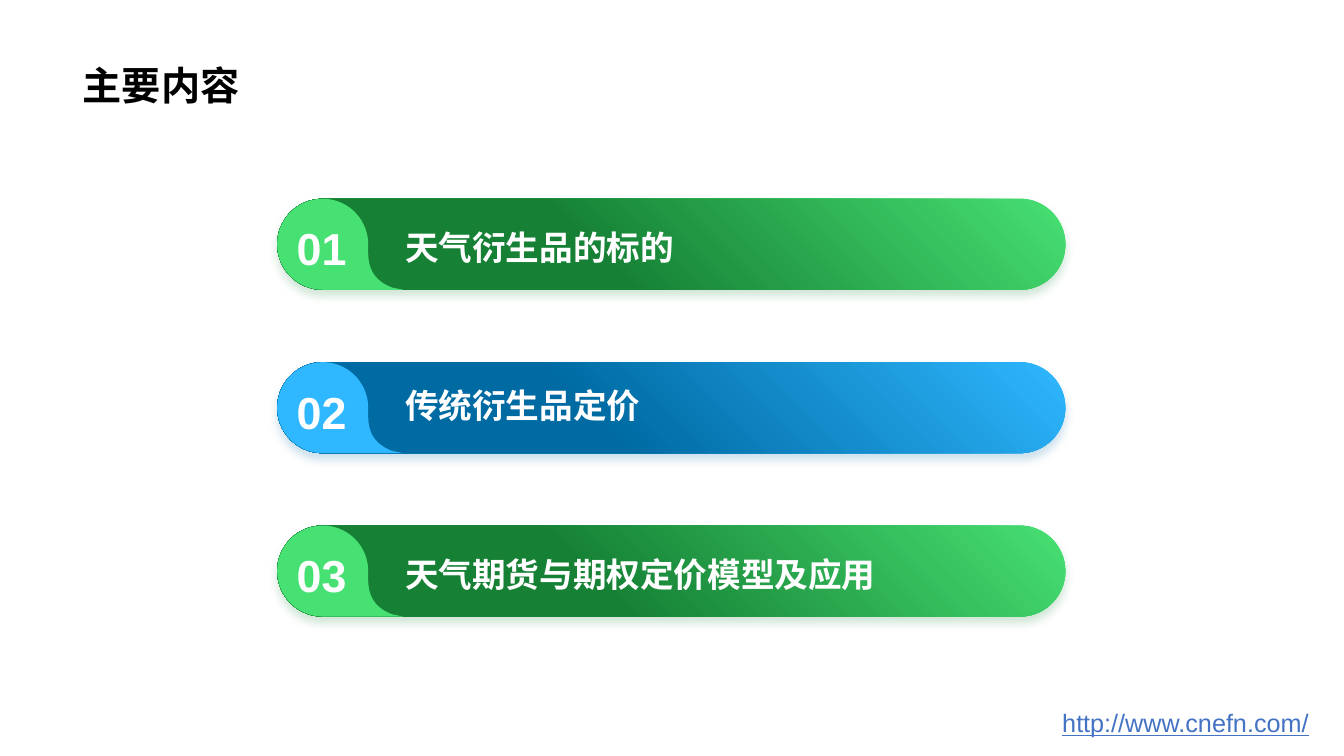
from math import cos, pi, sin

from lxml.etree import SubElement
from pptx import Presentation
from pptx.dml.color import RGBColor
from pptx.enum.shapes import MSO_SHAPE as Shape
from pptx.enum.text import MSO_ANCHOR as Anchor, MSO_AUTO_SIZE as AutoSize, PP_ALIGN as Align
from pptx.oxml.ns import qn
from pptx.util import Pt

TITLE = "主要内容"
SITE = "http://www.cnefn.com/"
# heading, bright colour, dark colour, distance of the heading below the bar top
CHAPTERS = [
    ("天气衍生品的标的", "green", "dark green", 16.4),
    ("传统衍生品定价", "blue", "dark blue", 13),
    ("天气期货与期权定价模型及应用", "green", "dark green", 16.4),
]
COLORS = {
    "black": "000000", "white": "FFFFFF", "link": "4472C4",
    "green": "47E073", "dark green": "168135",
    "blue": "2FB7FF", "dark blue": "006BA3",
}
BAR_LEFT, BAR_TOP, BAR_WIDTH, BAR_HEIGHT = 198, 142, 563, 65
BAR_PITCH = 116.7
RADIUS = BAR_HEIGHT / 2
TAIL_CURVE = [(65, 36.5), (65, 45), (65.5, 57), (82, 63.4)]
TAIL_TIP = (90, 65)


def color(name):
    return RGBColor.from_string(COLORS[name])


def write(shape, text, align=Align.LEFT, anchor=Anchor.TOP, wrap=True, **formats):
    frame = shape.text_frame
    frame.auto_size = AutoSize.NONE
    frame.word_wrap = wrap
    frame.vertical_anchor = anchor
    para = frame.paragraphs[0]
    para.alignment = align
    span = para.add_run()
    span.text = text
    span.font.name = "Arial"
    span.font.color.rgb = color(formats.pop("ink"))
    for name, value in formats.items():
        setattr(span.font, name, value)


def add_text(page, left, top, width, height, text, **formats):
    box = page.shapes.add_textbox(Pt(left), Pt(top), Pt(width), Pt(height))
    write(box, text, **formats)


def add_glow(shape, name):
    """Give the shape a soft shadow of the named colour, straight below it."""
    shape.shadow.inherit = False
    effects = shape._element.spPr.find(qn("a:effectLst"))
    shadow = SubElement(effects, qn("a:outerShdw"), blurRad=str(Pt(6)), dist=str(Pt(4)),
                        dir="5400000", algn="t", rotWithShape="0")
    tint = SubElement(shadow, qn("a:srgbClr"), val=COLORS[name])
    SubElement(tint, qn("a:alpha"), val="20000")


def add_bar(page, top, bright, dark):
    bar = page.shapes.add_shape(Shape.ROUNDED_RECTANGLE, Pt(BAR_LEFT), Pt(top),
                                Pt(BAR_WIDTH), Pt(BAR_HEIGHT))
    bar.adjustments[0] = 0.5
    bar.line.fill.background()
    bar.fill.gradient()
    bar.fill.gradient_angle = 225
    for stop, name, position in zip(bar.fill.gradient_stops, (bright, dark), (0, 0.6)):
        stop.color.rgb = color(name)
        stop.position = position
    add_glow(bar, dark)


def bezier(points, steps=16):
    for step in range(steps + 1):
        t = step / steps
        weights = ((1 - t) ** 3, 3 * t * (1 - t) ** 2, 3 * t * t * (1 - t), t ** 3)
        yield tuple(sum(w * p[axis] for w, p in zip(weights, points)) for axis in (0, 1))


def badge_outline():
    """Three quarters of a circle, then a tail sweeping right along the bar's foot."""
    steps = 72
    angles = [pi / 2 + 1.5 * pi * step / steps for step in range(steps + 1)]
    arc = [(RADIUS * (1 + cos(a)), RADIUS * (1 + sin(a))) for a in angles]
    return arc + list(bezier(TAIL_CURVE)) + [TAIL_TIP]


def add_badge(page, top, name):
    points = [(Pt(BAR_LEFT + x), Pt(top + y)) for x, y in badge_outline()]
    builder = page.shapes.build_freeform(*points[0])
    builder.add_line_segments(points[1:], close=True)
    badge = builder.convert_to_shape()
    badge.shadow.inherit = False
    badge.line.fill.background()
    badge.fill.solid()
    badge.fill.fore_color.rgb = color(name)


def main():
    deck = Presentation()
    deck.slide_width, deck.slide_height = Pt(960), Pt(540)
    page = deck.slides.add_slide(deck.slide_layouts[5])

    title = page.shapes.title
    title.left, title.top, title.width, title.height = Pt(52), Pt(0), Pt(855), Pt(81)
    write(title, TITLE, anchor=Anchor.BOTTOM, ink="black", size=Pt(28), bold=True)

    for index, (heading, bright, dark, drop) in enumerate(CHAPTERS):
        top = BAR_TOP + index * BAR_PITCH
        add_bar(page, top, bright, dark)
        add_badge(page, top, bright)
        add_text(page, BAR_LEFT + 84.3, top + drop, 415, 36, heading,
                 ink="white", size=Pt(24), bold=True)
        add_text(page, BAR_LEFT + 6.5, top + 12.2, 50.4, 46, f"{index + 1:02}",
                 align=Align.CENTER, wrap=False, ink="white", size=Pt(32), bold=True)

    add_text(page, 751.7, 502, 197, 29, SITE, ink="link", size=Pt(18), underline=True)
    deck.save("out.pptx")


if __name__ == "__main__":
    main()
